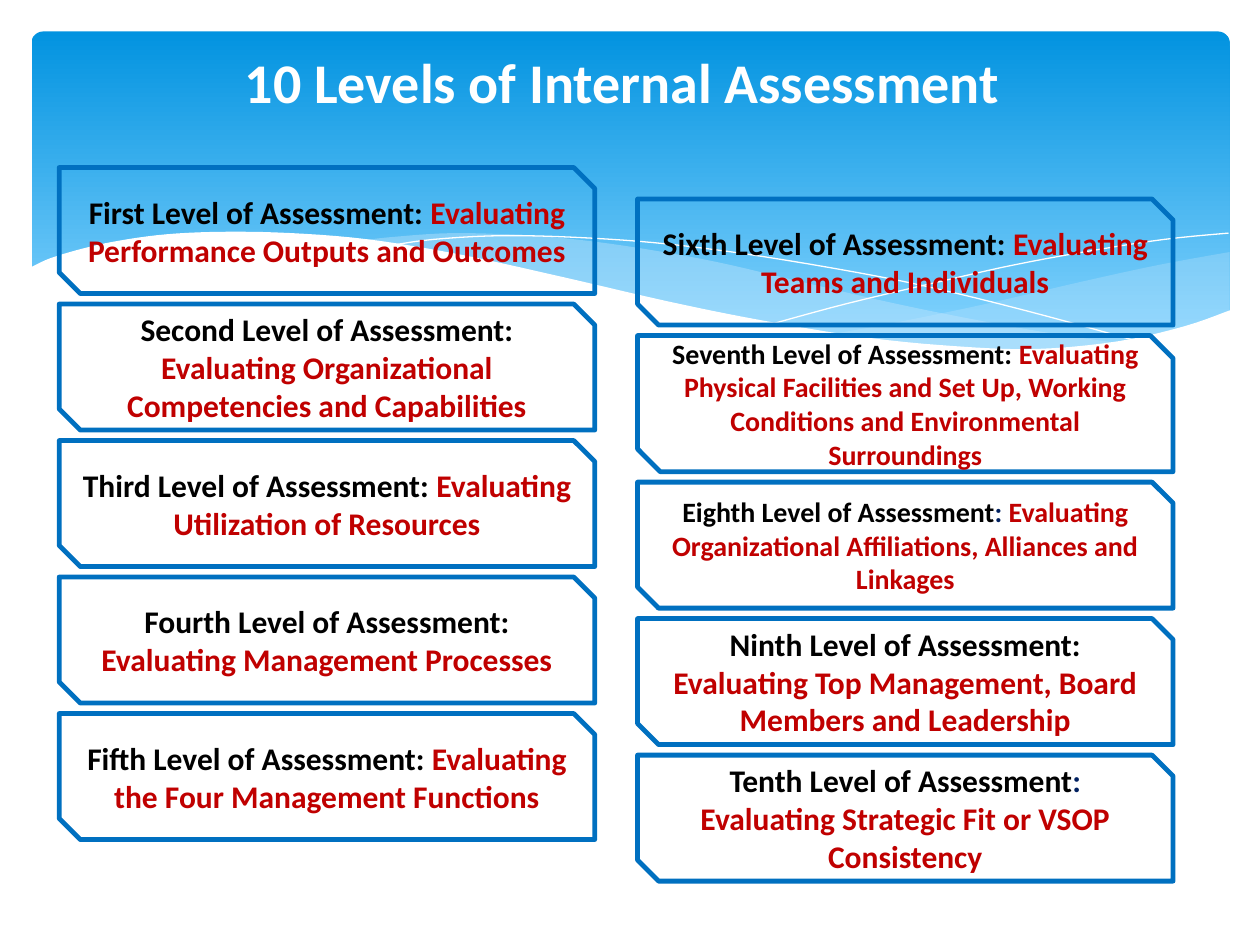
from dataclasses import dataclass

from lxml.etree import SubElement
from pptx import Presentation
from pptx.dml.color import RGBColor as RGB
from pptx.enum.shapes import MSO_SHAPE as SHAPE
from pptx.enum.text import MSO_ANCHOR as ANCHOR, MSO_AUTO_SIZE as AUTO_SIZE, PP_ALIGN as ALIGN
from pptx.oxml.ns import qn
from pptx.util import Inches, Pt


@dataclass(frozen=True)
class Theme:
    font: str = "Calibri"
    sky_top: RGB = RGB.from_string("0293E0")
    sky_bottom: RGB = RGB.from_string("83D3FE")
    wave: RGB = RGB.from_string("C6E7FC")
    white: RGB = RGB.from_string("FFFFFF")
    border: RGB = RGB.from_string("0070C0")
    level: RGB = RGB.from_string("000000")
    colon: RGB = RGB.from_string("002060")
    topic: RGB = RGB.from_string("C00000")
    title_size: int = 32
    body_size: int = 18
    small_size: int = 16
    border_width: float = 2.75


T = Theme()

# Wave outlines, in inches from the top left corner of the header
SIDE_TOP = [(9.51, 1.75), (8.96, 1.85), (8.36, 1.98), (7.54, 2.17), (6.81, 2.32), (6.36, 2.4)]
SIDE_BOTTOM = [(6.36, 2.4), (6.8, 2.46), (7.32, 2.51), (7.78, 2.53), (8.29, 2.51),
               (8.72, 2.45), (9.1, 2.37), (9.51, 2.22)]
MIDDLE_TOP = [(8.68, 2.48), (8.12, 2.4), (7.5, 2.29), (6.81, 2.15), (6.04, 1.97), (5.44, 1.83),
              (4.89, 1.73), (4.4, 1.66), (3.95, 1.62), (3.36, 1.6), (2.88, 1.63), (2.61, 1.66)]
MIDDLE_BOTTOM = [(2.61, 1.66), (3.17, 1.74), (3.79, 1.86), (4.66, 2.07), (5.41, 2.23),
                 (6.25, 2.39), (6.97, 2.49), (7.6, 2.53), (8.13, 2.53), (8.68, 2.48)]
LONG_LINE = [(2.84, 1.7), (3.19, 1.65), (3.76, 1.62), (4.44, 1.64), (5.08, 1.69), (5.83, 1.79),
             (6.7, 1.94), (7.35, 2.08), (8.06, 2.26), (8.82, 2.47)]
SHORT_LINE = [(5.88, 2.32), (6.47, 2.16), (7.23, 1.98), (7.81, 1.85), (8.41, 1.74),
              (8.99, 1.65), (9.5, 1.6)]
PAGE_TOP = [(9.52, 2.21), (9.15, 2.34), (8.62, 2.46), (7.98, 2.52), (7.36, 2.5), (6.63, 2.43),
            (5.78, 2.29), (5.04, 2.14), (4.22, 1.95), (3.4, 1.77), (2.67, 1.65), (2.05, 1.6),
            (1.52, 1.59), (1.07, 1.61), (0.7, 1.66), (0.42, 1.72), (0.15, 1.8), (-0.02, 1.88)]
PAGE_BOTTOM = [(-0.02, 3.04), (9.52, 3.04)]

# Level, separator run, topic, text size
LEFT_LEVELS = [
    ("First", T.level, "Performance Outputs and Outcomes", T.body_size),
    ("Second", T.level, "Organizational Competencies and Capabilities", T.body_size),
    ("Third", T.level, "Utilization of Resources", T.body_size),
    ("Fourth", T.level, "Management Processes", T.body_size),
    ("Fifth", T.level, "the Four Management Functions", T.body_size),
]
RIGHT_LEVELS = [
    ("Sixth", T.level, "Teams and Individuals", T.body_size),
    ("Seventh", T.level, "Physical Facilities and Set Up, Working Conditions and "
     "Environmental Surroundings", T.small_size),
    ("Eighth", T.colon, "Organizational Affiliations, Alliances and Linkages", T.small_size),
    ("Ninth", T.level, "Top Management, Board Members and Leadership", T.body_size),
    ("Tenth", T.colon, "Strategic Fit or VSOP Consistency", T.body_size),
]


def smooth(points, steps=5):
    """Return a Catmull-Rom curve through the points as a dense polyline."""
    padded = [points[0], *points, points[-1]]
    curve = [points[0]]
    for a, b, c, d in zip(padded, padded[1:], padded[2:], padded[3:]):
        for i in range(1, steps + 1):
            t = i / steps
            curve.append(tuple(
                (2 * q + (r - p) * t + (2 * p - 5 * q + 4 * r - s) * t ** 2
                 + (3 * q - p - 3 * r + s) * t ** 3) / 2
                for p, q, r, s in zip(a, b, c, d)))
    return curve


def add_path(slide, left, top, points, close):
    start, *rest = [(left + Inches(x), top + Inches(y)) for x, y in points]
    builder = slide.shapes.build_freeform(*start)
    builder.add_line_segments(rest, close=close)
    sp = builder.convert_to_shape()
    sp.shadow.inherit = False
    return sp


def add_wave(slide, left, top, points, color, opacity=100):
    sp = add_path(slide, left, top, points, close=True)
    sp.line.fill.background()
    sp.fill.solid()
    sp.fill.fore_color.rgb = color
    if opacity < 100:
        rgb = sp.element.spPr.find(qn("a:solidFill")).find(qn("a:srgbClr"))
        SubElement(rgb, qn("a:alpha"), val=str(opacity * 1000))


def add_hairline(slide, left, top, points):
    sp = add_path(slide, left, top, points, close=False)
    sp.fill.background()
    sp.line.color.rgb = T.white
    sp.line.width = Pt(0)


def add_header(slide, left, top, width, height):
    """Draw the gradient panel and the waves that cut its lower edge."""
    sky = slide.shapes.add_shape(SHAPE.ROUNDED_RECTANGLE, left, top, width, height)
    sky.adjustments[0] = 0.034
    sky.shadow.inherit = False
    sky.line.fill.background()
    sky.fill.gradient()
    sky.fill.gradient_angle = 270
    stops = zip(sky.fill.gradient_stops, (T.sky_top, T.sky_bottom), (0, 0.9))
    for stop, color, position in stops:
        stop.color.rgb = color
        stop.position = position

    add_wave(slide, left, top, smooth(SIDE_TOP) + smooth(SIDE_BOTTOM), T.wave, 29)
    add_wave(slide, left, top, smooth(MIDDLE_TOP) + smooth(MIDDLE_BOTTOM), T.wave, 40)
    for line in (LONG_LINE, SHORT_LINE):
        add_hairline(slide, left, top, smooth(line))
    add_wave(slide, left, top, smooth(PAGE_TOP) + PAGE_BOTTOM, T.white)


def add_run(p, text, size, color):
    r = p.add_run()
    r.text = text
    r.font.name = T.font
    r.font.size = Pt(size)
    r.font.bold = True
    r.font.color.rgb = color


def add_title(slide, left, top, width, height):
    tf = slide.shapes.add_textbox(left, top, width, height).text_frame
    tf.word_wrap = False
    tf.auto_size = AUTO_SIZE.SHAPE_TO_FIT_TEXT
    p = tf.paragraphs[0]
    p.alignment = ALIGN.CENTER
    add_run(p, "10 Levels of Internal Assessment", T.title_size, T.white)


def add_level(slide, left, top, width, height, level):
    name, colon_color, topic, size = level
    sp = slide.shapes.add_shape(SHAPE.SNIP_2_DIAG_RECTANGLE, left, top, width, height)
    sp.shadow.inherit = False
    sp.fill.background()
    sp.line.color.rgb = T.border
    sp.line.width = Pt(T.border_width)
    tf = sp.text_frame
    tf.word_wrap = True
    tf.vertical_anchor = ANCHOR.MIDDLE
    p = tf.paragraphs[0]
    p.alignment = ALIGN.CENTER
    add_run(p, f"{name} Level of Assessment", size, T.level)
    add_run(p, ": ", size, colon_color)
    add_run(p, f"Evaluating {topic}", size, T.topic)


def add_column(slide, left, top, width, levels, heights):
    """Stack the level boxes downwards with equal gaps."""
    for level, height in zip(levels, heights):
        add_level(slide, left, top, width, height, level)
        top += height + Inches(1 / 12)


def main():
    prs = Presentation()
    prs.slide_width, prs.slide_height = Inches(10), Inches(7.5)
    slide = prs.slides.add_slide(prs.slide_layouts[6])
    add_header(slide, Inches(0.25), Inches(0.25), Inches(9.51), Inches(2.7))
    add_title(slide, Inches(1.74), Inches(0.33), Inches(6.4), Inches(0.64))
    row, tall = Inches(1), Inches(1.08)
    add_column(slide, Inches(0.47), Inches(1.33), Inches(4.25), LEFT_LEVELS, [row] * 5)
    add_column(slide, Inches(5.06), Inches(1.58), Inches(4.25), RIGHT_LEVELS,
               [row, tall, row, row, row])
    prs.save("out.pptx")


if __name__ == "__main__":
    main()
